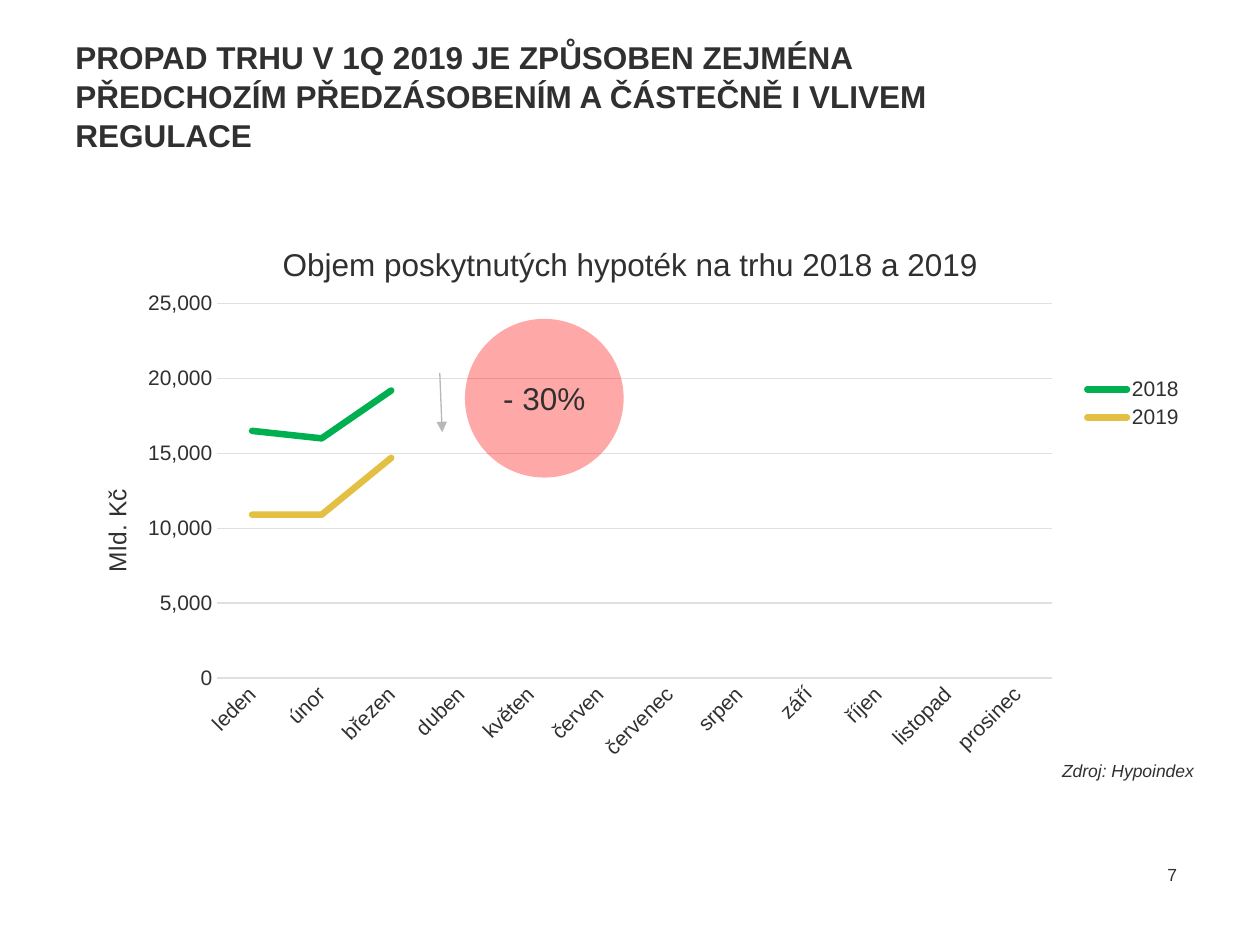
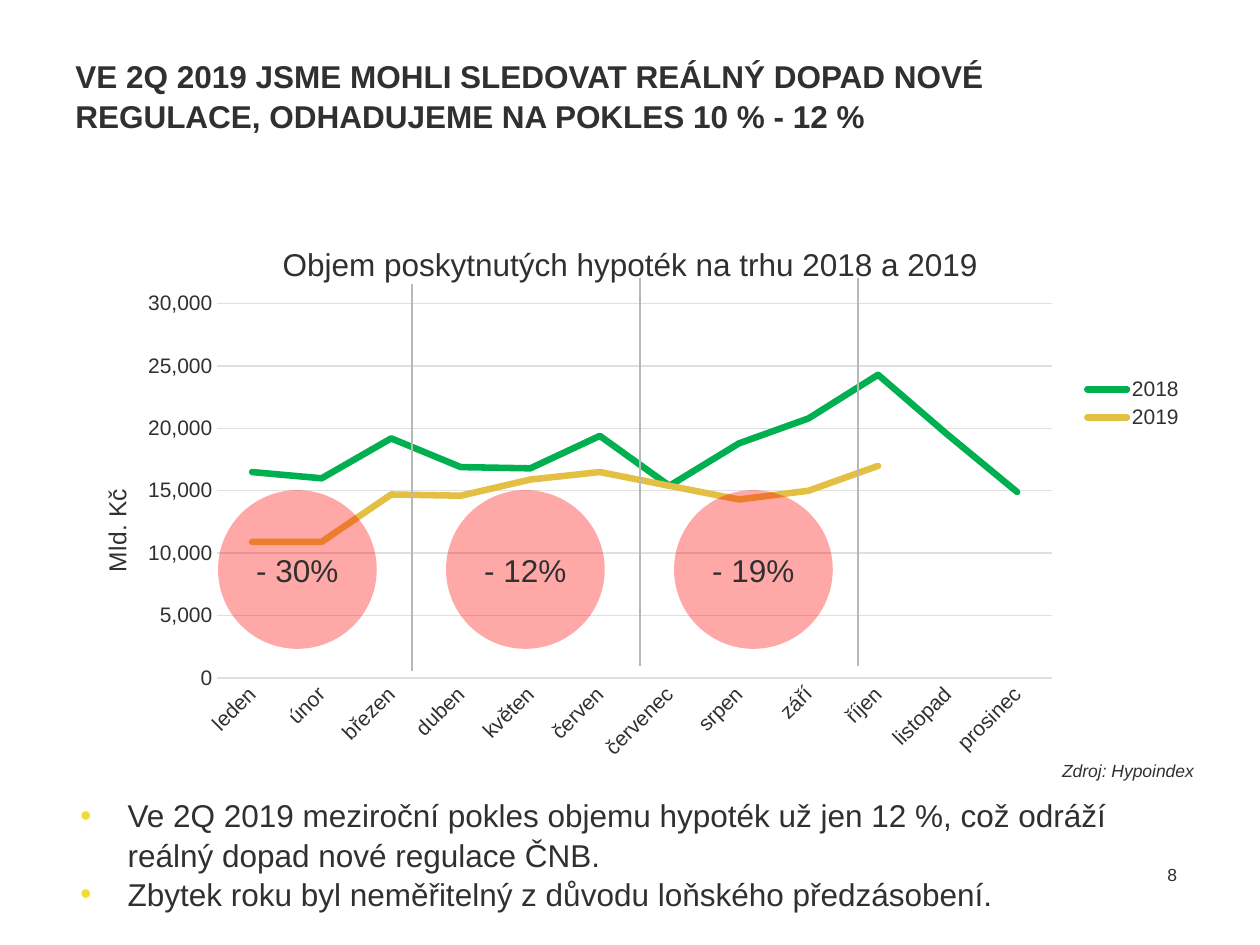
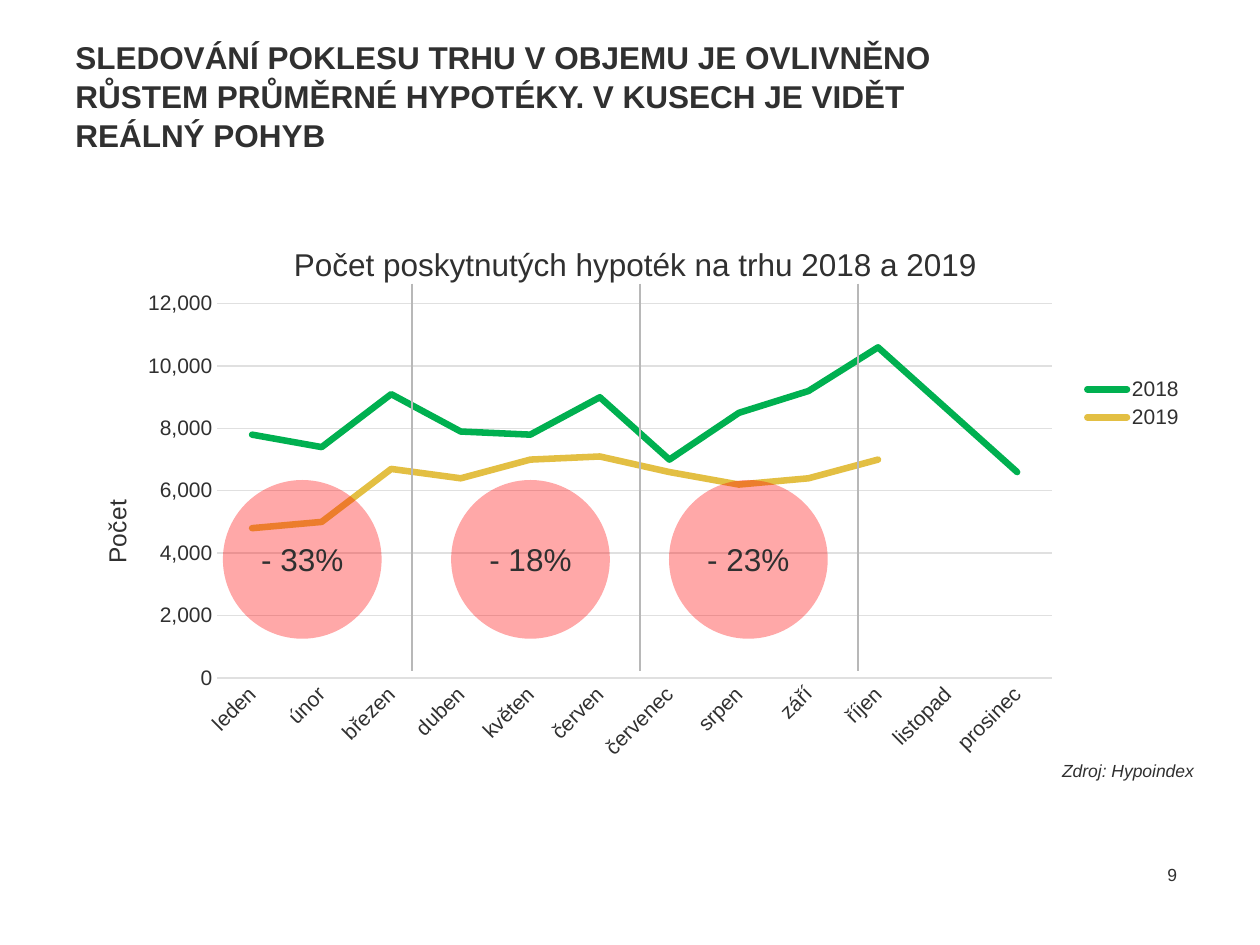
from dataclasses import dataclass
from lxml.etree import SubElement
from pptx import Presentation
from pptx.chart.data import CategoryChartData
from pptx.dml.color import RGBColor
from pptx.enum.chart import XL_CHART_TYPE, XL_LEGEND_POSITION, XL_TICK_MARK
from pptx.enum.shapes import MSO_CONNECTOR, MSO_SHAPE
from pptx.enum.text import MSO_ANCHOR, PP_ALIGN
from pptx.oxml.ns import qn
from pptx.util import Pt


@dataclass(frozen=True)
class Theme:
    font: str = "Arial"
    ink: RGBColor = RGBColor(0x30, 0x30, 0x30)
    grid: RGBColor = RGBColor(0xE0, 0xE0, 0xE0)
    divider: RGBColor = RGBColor(0xB8, 0xB8, 0xB8)
    drop: RGBColor = RGBColor(0xFF, 0x00, 0x00)
    bullet: str = "F5DB2E"
    years: tuple = (RGBColor(0x00, 0xB0, 0x50), RGBColor(0xE3, 0xBF, 0x43))
    large: int = 18
    axis_title: int = 14
    label: int = 12
    small: int = 10
    leading: float = 1.04


theme = Theme()
months = ["leden", "únor", "březen", "duben", "květen", "červen",
          "červenec", "srpen", "září", "říjen", "listopad", "prosinec"]
volume_title = "Objem poskytnutých hypoték na trhu 2018 a 2019"
volume_2018 = [16500, 16000, 19200, 16900, 16800, 19400, 15400, 18800, 20800, 24300, 19500, 14900]
volume_2019 = [10900, 10900, 14700, 14600, 15900, 16500, 15400, 14300, 15000, 17000]
drop_size = 90.7

pages = [
    dict(
        heading="PROPAD TRHU V 1Q 2019 JE ZPŮSOBEN ZEJMÉNA PŘEDCHOZÍM PŘEDZÁSOBENÍM A ČÁSTEČNĚ I VLIVEM REGULACE",
        chart_title=volume_title, title_x=0.19, unit="Mld. Kč", unit_y=0.49,
        values=(volume_2018[:3], volume_2019[:3]), top=25000, step=5000,
        drops=[("- 30%", 265.7)], drop_y=182.2,
        dividers=[], points=[],
    ),
    dict(
        heading="VE 2Q 2019 JSME MOHLI SLEDOVAT REÁLNÝ DOPAD NOVÉ REGULACE, ODHADUJEME NA POKLES 10 % - 12 %",
        chart_title=volume_title, title_x=0.19, unit="Mld. Kč", unit_y=0.49,
        values=(volume_2018, volume_2019), top=30000, step=5000,
        drops=[("- 30%", 124.6), ("- 12%", 254.9), ("- 19%", 385.2)], drop_y=280.1,
        dividers=[(235.4, 162), (365.8, 159.1), (490.3, 159.1)],
        points=["Ve 2Q 2019 meziroční pokles objemu hypoték už jen 12 %, což odráží reálný dopad nové regulace ČNB.",
                "Zbytek roku byl neměřitelný z důvodu loňského předzásobení."],
    ),
    dict(
        heading="SLEDOVÁNÍ POKLESU TRHU V OBJEMU JE OVLIVNĚNO RŮSTEM PRŮMĚRNÉ HYPOTÉKY. V KUSECH JE VIDĚT REÁLNÝ POHYB",
        chart_title="Počet poskytnutých hypoték na trhu 2018 a 2019", title_x=0.2, unit="Počet", unit_y=0.51,
        values=([7800, 7400, 9100, 7900, 7800, 9000, 7000, 8500, 9200, 10600, 8600, 6600],
                [4800, 5000, 6700, 6400, 7000, 7100, 6600, 6200, 6400, 7000]), top=12000, step=2000,
        drops=[("- 33%", 127.4), ("- 18%", 257.8), ("- 23%", 382.3)], drop_y=274.3,
        dividers=[(x, 162) for x in (235.4, 365.8, 490.3)], points=[],
    ),
]


def add_words(paragraph, words, size, bold=False, italic=False):
    run = paragraph.add_run()
    run.text = words
    run.font.name = theme.font
    run.font.size = Pt(size)
    run.font.bold = bold
    run.font.italic = italic
    run.font.color.rgb = theme.ink


def place(element, index, **fractions):
    for former in element.findall(qn("c:layout")):
        element.remove(former)
    layout = SubElement(element, qn("c:layout"))
    element.insert(index, layout)
    manual = SubElement(layout, qn("c:manualLayout"))
    if "w" in fractions and element.tag == qn("c:plotArea"):
        SubElement(manual, qn("c:layoutTarget")).set("val", "inner")
    for side in ("x", "y"):
        SubElement(manual, qn(f"c:{side}Mode")).set("val", "edge")
    for side, fraction in fractions.items():
        SubElement(manual, qn(f"c:{side}")).set("val", str(fraction))


deck = Presentation()
deck.slide_width, deck.slide_height = Pt(720), Pt(540)

for number, page in enumerate(pages, start=7):
    slide = deck.slides.add_slide(deck.slide_layouts[6])

    heading = slide.shapes.add_textbox(Pt(36), Pt(31.7), Pt(551), Pt(45.4)).text_frame
    heading.word_wrap = True
    heading.vertical_anchor = MSO_ANCHOR.MIDDLE
    heading.paragraphs[0].line_spacing = theme.leading
    add_words(heading.paragraphs[0], page["heading"], theme.large, bold=True)

    page_number = slide.shapes.add_textbox(Pt(645), Pt(485.3), Pt(34.7), Pt(28.8)).text_frame
    page_number.word_wrap = True
    page_number.vertical_anchor = MSO_ANCHOR.MIDDLE
    page_number.paragraphs[0].alignment = PP_ALIGN.RIGHT
    add_words(page_number.paragraphs[0], str(number), theme.small)

    source = slide.shapes.add_textbox(Pt(599.8), Pt(430.6), Pt(90.7), Pt(19.4)).text_frame
    source.word_wrap = False
    add_words(source.paragraphs[0], "Zdroj: Hypoindex", theme.small, italic=True)

    mortgages = CategoryChartData(number_format="#,##0")
    mortgages.categories = months
    for year, values in zip(("2018", "2019"), page["values"]):
        mortgages.add_series(year, values + [None] * (len(months) - len(values)))
    chart = slide.shapes.add_chart(XL_CHART_TYPE.LINE, Pt(36), Pt(120.2), Pt(643.7), Pt(319.7), mortgages).chart
    chart.font.name = theme.font
    chart.font.size = Pt(theme.label)
    chart.font.color.rgb = theme.ink
    chart.plots[0].vary_by_categories = False
    place(chart._chartSpace.chart.plotArea, 0, x=0.137, y=0.167, w=0.741, h=0.669)

    chart.has_title = True
    add_words(chart.chart_title.text_frame.paragraphs[0], page["chart_title"], theme.large)
    place(chart.chart_title._element, 1, x=page["title_x"], y=0.05)

    chart.has_legend = True
    chart.legend.position = XL_LEGEND_POSITION.RIGHT
    chart.legend.include_in_layout = False
    place(chart.legend._element, 1, x=0.9, y=0.29, w=0.1, h=0.11)

    for series, color in zip(chart.plots[0].series, theme.years):
        series.smooth = False
        series.format.line.color.rgb = color
        series.format.line.width = Pt(3.75)
        series._element.find(f"{qn('c:spPr')}/{qn('a:ln')}").set("cap", "rnd")

    for axis in (chart.category_axis, chart.value_axis):
        axis.major_tick_mark = axis.minor_tick_mark = XL_TICK_MARK.NONE
        axis.tick_labels.font.name = theme.font
        axis.tick_labels.font.size = Pt(theme.label)
        axis.tick_labels.font.color.rgb = theme.ink
    month_axis, amount_axis = chart.category_axis, chart.value_axis
    month_axis.format.line.color.rgb = theme.grid
    month_axis.format.line.width = Pt(0.75)
    month_axis._element.find(f"{qn('c:txPr')}/{qn('a:bodyPr')}").set("rot", "-2700000")
    amount_axis.minimum_scale, amount_axis.maximum_scale = 0, page["top"]
    amount_axis.major_unit = page["step"]
    amount_axis.tick_labels.number_format = "#,##0"
    amount_axis.tick_labels.number_format_is_linked = False
    amount_axis.format.line.fill.background()
    amount_axis.major_gridlines.format.line.color.rgb = theme.grid
    amount_axis.major_gridlines.format.line.width = Pt(0.75)
    unit = amount_axis.axis_title
    add_words(unit.text_frame.paragraphs[0], page["unit"], theme.axis_title)
    unit._element.find(f".//{qn('a:bodyPr')}").set("rot", "-5400000")
    place(unit._element, 1, x=0.03, y=page["unit_y"])

    for words, left in page["drops"]:
        drop = slide.shapes.add_shape(MSO_SHAPE.OVAL, Pt(left), Pt(page["drop_y"]), Pt(drop_size), Pt(drop_size))
        drop.shadow.inherit = False
        drop.line.fill.background()
        drop.fill.solid()
        drop.fill.fore_color.rgb = theme.drop
        SubElement(drop._element.spPr.find(f".//{qn('a:srgbClr')}"), qn("a:alpha")).set("val", "34000")
        drop.text_frame.vertical_anchor = MSO_ANCHOR.MIDDLE
        drop.text_frame.paragraphs[0].alignment = PP_ALIGN.CENTER
        add_words(drop.text_frame.paragraphs[0], words, theme.large)

    strokes = [(x, y, x, y + 221.4) for x, y in page["dividers"]]
    decline = (251.3, 213.1, 252.7, 247)
    for ends in strokes or [decline]:
        stroke = slide.shapes.add_connector(MSO_CONNECTOR.STRAIGHT, *map(Pt, ends))
        stroke.line.color.rgb = theme.divider
        stroke.line.width = Pt(0.75)
        if ends == decline:
            SubElement(stroke.line._get_or_add_ln(), qn("a:tailEnd")).set("type", "triangle")
        SubElement(stroke._element.spPr, qn("a:effectLst"))

    if page["points"]:
        comments = slide.shapes.add_textbox(Pt(38.9), Pt(450.7), Pt(601.9), Pt(72.7)).text_frame
        comments.word_wrap = True
        for index, point in enumerate(page["points"]):
            paragraph = comments.add_paragraph() if index else comments.paragraphs[0]
            paragraph.line_spacing = theme.leading
            properties = paragraph._p.get_or_add_pPr()
            properties.set("marL", str(Pt(27)))
            properties.set("indent", str(Pt(-27)))
            SubElement(SubElement(properties, qn("a:buClr")), qn("a:srgbClr")).set("val", theme.bullet)
            SubElement(properties, qn("a:buFont")).set("typeface", theme.font)
            SubElement(properties, qn("a:buChar")).set("char", "•")
            add_words(paragraph, point, theme.large)

deck.save("out.pptx")
